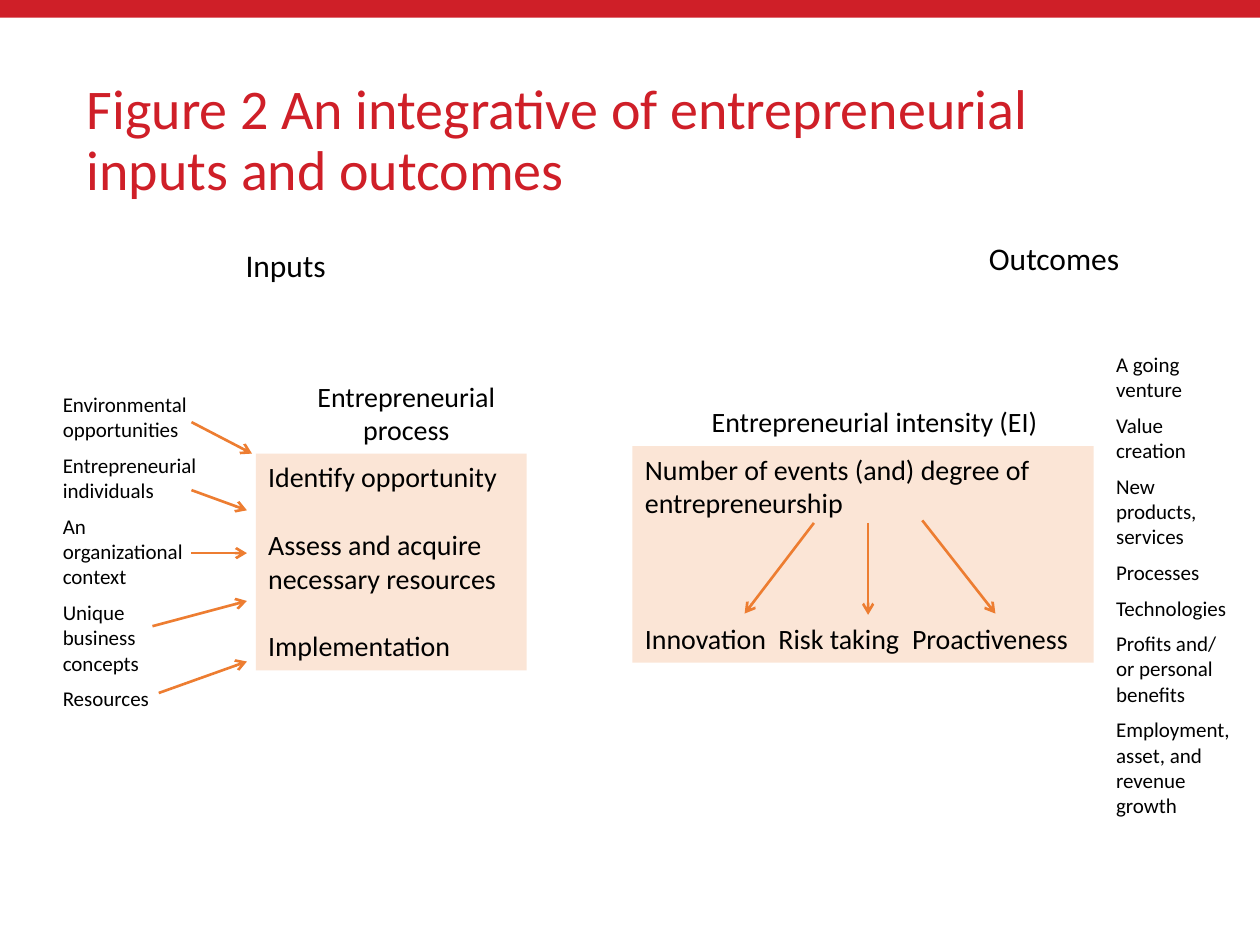
from lxml import etree
from pptx import Presentation
from pptx import util as u
from pptx.dml.color import RGBColor
from pptx.enum import shapes, text
from pptx.oxml.ns import qn

RED, PEACH, ORANGE, BLACK = "CF1F28", "FBE5D6", "ED7D31", "000000"
LINE = 19.5  # height in points of one 16 pt line


def color(value):
    return RGBColor.from_string(value)


def write(shape, paragraphs, size=16, fill=BLACK, align=text.PP_ALIGN.LEFT,
          anchor=text.MSO_ANCHOR.TOP, wrap=True, gaps=(), spacing=None, tabs=()):
    """Write paragraphs; gaps holds the space before each one after the first."""
    frame = shape.text_frame
    frame.word_wrap = wrap
    frame.vertical_anchor = anchor
    for index, content in enumerate(paragraphs):
        paragraph = frame.add_paragraph() if index else frame.paragraphs[0]
        paragraph.alignment = align
        if spacing:
            paragraph.line_spacing = spacing
        if index and gaps:
            paragraph.space_before = u.Pt(gaps[index - 1])
        if "\t" in content:
            tab_list = etree.SubElement(paragraph._p.get_or_add_pPr(), qn("a:tabLst"))
            for position in tabs:
                etree.SubElement(tab_list, qn("a:tab"), pos=str(u.Inches(position)), algn="l")
        run = paragraph.add_run()
        run.text = content
        run.font.name = "Calibri"
        run.font.size = u.Pt(size)
        run.font.color.rgb = color(fill)


presentation = Presentation()
presentation.slide_width, presentation.slide_height = u.Inches(10), u.Inches(7.5)
slide = presentation.slides.add_slide(presentation.slide_layouts[6])

# Top band and the two panels
panels = []
for left, top, width, height, fill in [
    (0, 0, 10, 0.14, RED),
    (2.03, 3.6, 2.15, 1.72, PEACH),
    (5.02, 3.54, 3.66, 1.72, PEACH),
]:
    panel = slide.shapes.add_shape(
        shapes.MSO_SHAPE.RECTANGLE,
        u.Inches(left), u.Inches(top), u.Inches(width), u.Inches(height))
    panel.shadow.inherit = False
    panel.fill.solid()
    panel.fill.fore_color.rgb = color(fill)
    panel.line.fill.background()
    panels.append(panel)

band, process, intensity = panels
write(process, ["Identify opportunity", "Assess and acquire necessary resources",
                "Implementation"], gaps=(LINE, LINE))
write(intensity, ["Number of events (and) degree of entrepreneurship",
                  "Innovation\tRisk taking\tProactiveness"],
      gaps=(3 * LINE,), tabs=(1.06, 2.12))

# Title, headings and side lists
inputs = ["Environmental opportunities", "Entrepreneurial individuals",
          "An organizational context", "Unique business concepts", "Resources"]
outcomes = ["A going venture", "Value creation", "New products, services", "Processes",
            "Technologies", "Profits and/ or personal benefits",
            "Employment, asset, and revenue growth"]
for left, top, width, height, paragraphs, options in [
    (0.59, 0.4, 8.82, 1.45,
     ["Figure 2 An integrative of entrepreneurial inputs and outcomes"],
     dict(size=32, fill=RED, anchor=text.MSO_ANCHOR.MIDDLE, spacing=0.9)),
    (5.55, 3.16, 2.82, 0.37, ["Entrepreneurial intensity (EI)"], dict(wrap=False)),
    (2.15, 2.96, 2.15, 0.64, ["Entrepreneurial process"],
     dict(align=text.PP_ALIGN.CENTER)),
    (1.85, 1.9, 0.85, 0.4, ["Inputs"], dict(size=18, wrap=False)),
    (7.75, 1.85, 1.25, 0.4, ["Outcomes"], dict(size=18, wrap=False)),
    (8.76, 2.74, 1.14, 3.84, outcomes, dict(size=12, gaps=[6] * 6)),
    (0.4, 3.06, 1.27, 2.66, inputs, dict(size=12, gaps=[6] * 4)),
]:
    box = slide.shapes.add_textbox(
        u.Inches(left), u.Inches(top), u.Inches(width), u.Inches(height))
    write(box, paragraphs, **options)

# Arrows: intensity to its dimensions, then inputs to the process
for x1, y1, x2, y2 in [
    (6.46, 4.15, 5.91, 4.87),
    (6.89, 4.15, 6.89, 4.88),
    (7.32, 4.13, 7.9, 4.87),
    (1.52, 3.35, 2, 3.6),
    (1.52, 3.89, 1.96, 4.05),
    (1.52, 4.39, 1.96, 4.39),
    (1.21, 4.97, 1.96, 4.77),
    (1.26, 5.5, 1.96, 5.25),
]:
    arrow = slide.shapes.add_connector(
        shapes.MSO_CONNECTOR.STRAIGHT,
        u.Inches(x1), u.Inches(y1), u.Inches(x2), u.Inches(y2))
    arrow.line.color.rgb = color(ORANGE)
    arrow.line.width = u.Pt(1.5)
    properties = arrow._element.spPr
    etree.SubElement(properties.find(qn("a:ln")), qn("a:tailEnd"), type="arrow")
    etree.SubElement(properties, qn("a:effectLst"))

presentation.save("out.pptx")
